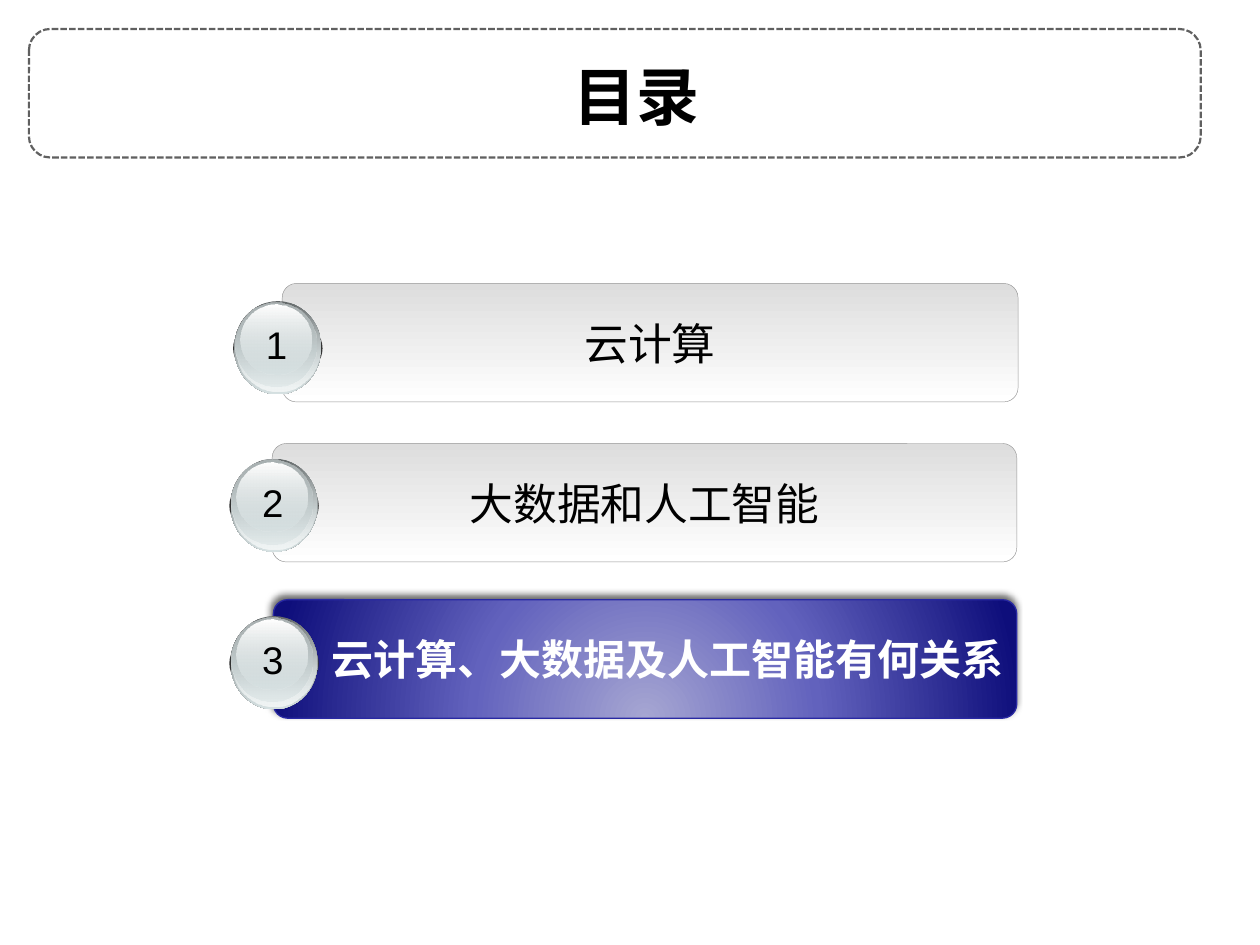
from lxml import etree
from pptx import Presentation
from pptx.dml.color import RGBColor
from pptx.enum.dml import MSO_LINE
from pptx.enum.shapes import MSO_SHAPE
from pptx.enum.text import MSO_ANCHOR, PP_ALIGN
from pptx.oxml.ns import qn
from pptx.util import Inches, Pt

ROUNDED, OVAL = MSO_SHAPE.ROUNDED_RECTANGLE, MSO_SHAPE.OVAL
CENTER, MIDDLE = PP_ALIGN.CENTER, MSO_ANCHOR.MIDDLE
DASH = MSO_LINE.SQUARE_DOT

BLACK = RGBColor(0x00, 0x00, 0x00)
WHITE = RGBColor(0xFF, 0xFF, 0xFF)
FRAME_GRAY = RGBColor(0x60, 0x60, 0x60)
BAR_TOP = RGBColor(0xDD, 0xDD, 0xDD)
BAR_LINE = RGBColor(0x96, 0x96, 0x96)
ACTIVE_LIGHT = RGBColor(0xA6, 0xA6, 0xD2)
ACTIVE_MID = RGBColor(0x62, 0x62, 0xBD)
ACTIVE_DARK = RGBColor(0x0E, 0x0E, 0x7B)
ACTIVE_LINE = RGBColor(0x29, 0x29, 0xA3)
ORB_BASE = RGBColor(0x33, 0x33, 0x33)
ORB_DARK = RGBColor(0x63, 0x68, 0x69)
ORB_GRAY = RGBColor(0xAA, 0xB2, 0xB3)
ORB_PALE = RGBColor(0xD6, 0xE1, 0xE2)
ORB_GLOW = RGBColor(0xF1, 0xF5, 0xF5)
CJK = "Noto Sans CJK SC"


def set_gradient(s, stops, radial=False):
    """Fill s with (position %, colour, opacity %) stops, downwards or radially."""
    s.fill.gradient()
    grad = s._element.spPr.find(qn("a:gradFill"))
    for child in list(grad):
        grad.remove(child)
    stop_list = etree.SubElement(grad, qn("a:gsLst"))
    for pos, color, opacity in stops:
        stop = etree.SubElement(stop_list, qn("a:gs"), pos=str(pos * 1000))
        clr = etree.SubElement(stop, qn("a:srgbClr"), val=str(color))
        if opacity < 100:
            etree.SubElement(clr, qn("a:alpha"), val=str(opacity * 1000))
    if radial:
        path = etree.SubElement(grad, qn("a:path"), path="circle")
        etree.SubElement(path, qn("a:fillToRect"),
                         l="50000", t="155000", r="50000", b="-55000")
    else:
        etree.SubElement(grad, qn("a:lin"), ang="5400000", scaled="1")


def set_text(s, text, size, font, color=BLACK, bold=False):
    p = s.text_frame.paragraphs[0]
    p.text = text
    r = p.runs[0]
    r.font.size, r.font.name, r.font.bold = Pt(size), font, bold
    r.font.color.rgb = color
    etree.SubElement(r._r.get_or_add_rPr(), qn("a:ea"), typeface=CJK)
    return p


prs = Presentation()
prs.slide_width, prs.slide_height = Inches(10), Inches(7.5)
slide = prs.slides.add_slide(prs.slide_layouts[6])
shapes = slide.shapes

frame = shapes.add_shape(ROUNDED, Inches(0.23), Inches(0.23), Inches(9.3), Inches(1.02))
frame.shadow.inherit = False
frame.fill.background()
frame.line.color.rgb = FRAME_GRAY
frame.line.width = Pt(1.25)
frame.line.dash_style = DASH

# text, bar left, bar top, bar width, orb left, active
items = [
    ("云计算", 2.24, 2.25, 5.84, 1.86, False),
    ("大数据和人工智能", 2.16, 3.52, 5.91, 1.83, False),
    ("云计算、大数据及人工智能有何关系", 2.17, 4.76, 5.9, 1.83, True),
]
# offset x, offset y, width, height, gradient from top to bottom
orb_layers = [
    (-0.01, 0.11, 0.71, 0.53, None),
    (0, 0, 0.69, 0.74, [(0, ORB_DARK, 100), (100, ORB_PALE, 100)]),
    (0.01, 0, 0.67, 0.72, [(0, ORB_PALE, 0), (100, ORB_GLOW, 100)]),
    (0.01, 0.01, 0.64, 0.67, [(0, ORB_GRAY, 100), (100, ORB_PALE, 48)]),
    (0.05, 0.03, 0.56, 0.55, [(0, WHITE, 100), (100, ORB_PALE, 38)]),
]

for i, (text, left, top, width, orb_left, active) in enumerate(items):
    bar = shapes.add_shape(ROUNDED, Inches(left), Inches(top), Inches(width), Inches(0.94))
    bar.adjustments[0] = 0.12
    bar.shadow.inherit = False
    if active:
        set_gradient(bar, [(0, ACTIVE_LIGHT, 100), (46, ACTIVE_MID, 100),
                           (100, ACTIVE_DARK, 100)], radial=True)
        bar.line.color.rgb = ACTIVE_LINE
        bar.line.width = Pt(0.75)
        effects = bar._element.spPr.find(qn("a:effectLst"))
        shadow = etree.SubElement(effects, qn("a:outerShdw"), blurRad=str(Pt(4)),
                                  dist=str(Pt(3)), dir=str(245 * 60000))
        clr = etree.SubElement(shadow, qn("a:srgbClr"), val=str(BLACK))
        etree.SubElement(clr, qn("a:alpha"), val="60000")
        p = set_text(bar, text, 24, CJK, WHITE, bold=True)
        bar.text_frame.margin_left = Inches(0.46)
    else:
        set_gradient(bar, [(0, BAR_TOP, 100), (100, WHITE, 100)])
        bar.line.color.rgb = BAR_LINE
        bar.line.width = Pt(0.25)
        p = set_text(bar, text, 25, CJK)
    p.alignment = CENTER
    bar.text_frame.vertical_anchor = MIDDLE
    bar.text_frame.word_wrap = False

    orb_top = 2.39 + 1.25 * i
    orb = shapes.add_group_shape()
    for dx, dy, w, h, stops in orb_layers:
        s = orb.shapes.add_shape(OVAL, Inches(orb_left + dx), Inches(orb_top + dy),
                                 Inches(w), Inches(h))
        s.shadow.inherit = False
        s.line.fill.background()
        if stops:
            set_gradient(s, stops)
        else:
            s.fill.solid()
            s.fill.fore_color.rgb = ORB_BASE

    number = shapes.add_textbox(Inches(orb_left + 0.13), Inches(orb_top + 0.1),
                                Inches(0.34), Inches(0.48))
    tf = number.text_frame
    tf.margin_left = tf.margin_right = Inches(0.12)
    tf.margin_top = tf.margin_bottom = Inches(0.06)
    tf.word_wrap = False
    set_text(number, str(i + 1), 22, "Arial")

title = shapes.add_textbox(Inches(1.33), Inches(0.38), Inches(7.45), Inches(0.76))
title.text_frame.word_wrap = True
title.text_frame.vertical_anchor = MIDDLE
set_text(title, "目录", 36, "Arial", bold=True).alignment = CENTER

prs.save("out.pptx")
